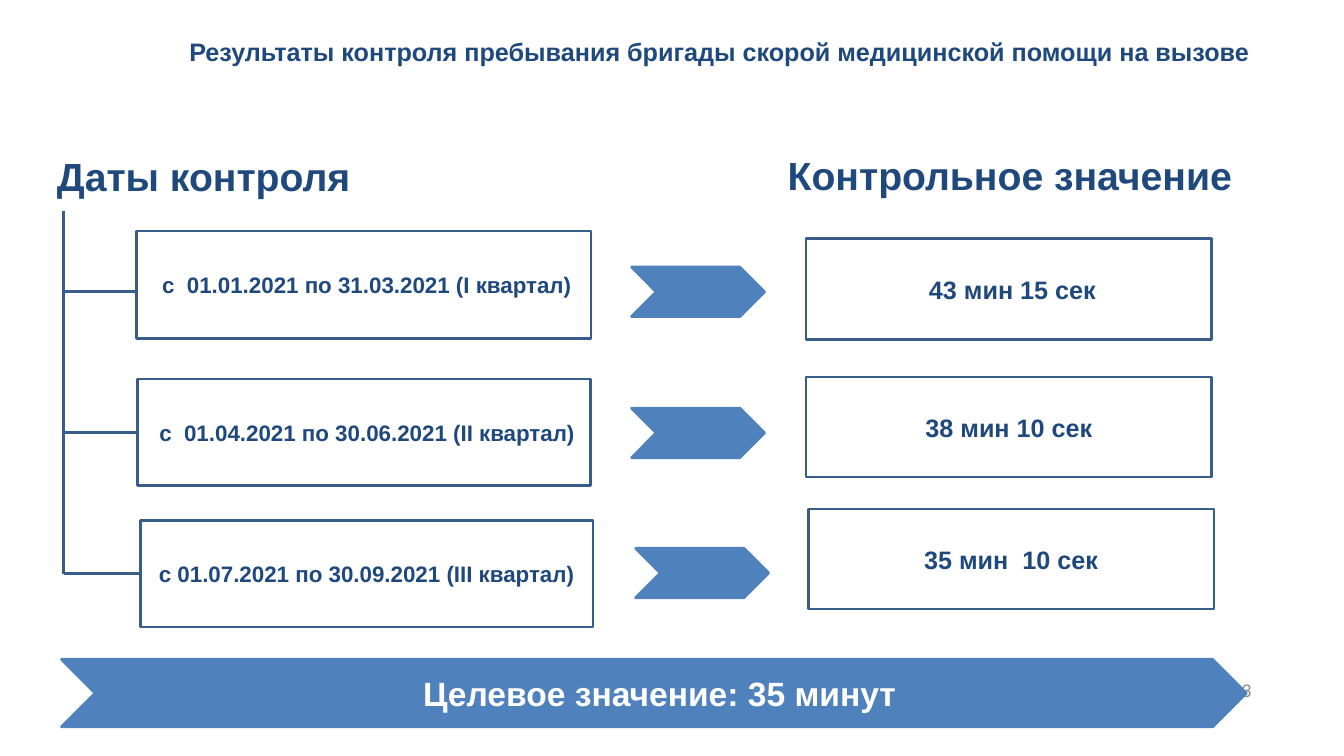
from typing import NamedTuple

from lxml.etree import SubElement
from pptx import Presentation
from pptx.dml.color import RGBColor
from pptx.enum.shapes import MSO_CONNECTOR, MSO_SHAPE
from pptx.enum.text import MSO_ANCHOR, PP_ALIGN
from pptx.oxml.ns import qn
from pptx.shapes.autoshape import Shape
from pptx.util import Pt

NAVY, BLUE, OUTLINE, WHITE, GRAY = "1F497D", "4F81BD", "385D8A", "FFFFFF", "8C8C8C"
SPINE_X, SPINE_TOP = 45.6, 150.5
BRANCH_TOP, BRANCH_STEP = 208.1, 100.8


class Box(NamedTuple):
    left: float
    top: float
    width: float
    height: float


class Quarter(NamedTuple):
    period: str
    period_box: Box
    arrow_box: Box
    value: str
    value_box: Box


QUARTERS = [
    Quarter(" с  01.01.2021 по 31.03.2021 (I квартал)", Box(97.4, 165, 325, 77),
            Box(451.4, 190.8, 95, 35.3), " 43 мин 15 сек", Box(576, 170.6, 290, 72)),
    Quarter(" с  01.04.2021 по 30.06.2021 (II квартал)", Box(98.4, 270.7, 323.5, 76.4),
            Box(451.4, 291.6, 95, 35.3), "38 мин 10 сек", Box(576, 269.3, 290, 71.4)),
    Quarter("с 01.07.2021 по 30.09.2021 (III квартал)", Box(100.3, 371.5, 323.5, 76.4),
            Box(454.3, 391.7, 95, 35.3), "35 мин  10 сек", Box(577.6, 363.6, 290, 71.4)),
]


def color(value: str) -> RGBColor:
    return RGBColor.from_string(value)


def write(s: Shape, text: str, size: float, font_color: str = NAVY, bold: bool = True,
          font: str = "Arial", align: PP_ALIGN = PP_ALIGN.CENTER) -> None:
    tf = s.text_frame
    tf.text = text
    tf.word_wrap = True
    tf.vertical_anchor = MSO_ANCHOR.MIDDLE
    p = tf.paragraphs[0]
    p.alignment = align
    r = p.runs[0]
    r.font.name, r.font.size, r.font.bold = font, Pt(size), bold
    r.font.color.rgb = color(font_color)


def add_text(box: Box, text: str, size: float, **style) -> None:
    write(slide.shapes.add_textbox(*map(Pt, box)), text, size, **style)


def add_figure(preset: MSO_SHAPE, box: Box, fill: str, line: str) -> Shape:
    s = slide.shapes.add_shape(preset, *map(Pt, box))
    s.shadow.inherit = False
    s.fill.solid()
    s.fill.fore_color.rgb = color(fill)
    s.line.color.rgb = color(line)
    s.line.width = Pt(2)
    return s


def add_line(x1: float, y1: float, x2: float, y2: float):
    c = slide.shapes.add_connector(MSO_CONNECTOR.STRAIGHT, *map(Pt, (x1, y1, x2, y2)))
    c.line.color.rgb = color(OUTLINE)
    c.line.width = Pt(2.25)
    SubElement(c._element.spPr, qn("a:effectLst"))
    return c


def add_quarter(quarter: Quarter, branch_y: float) -> None:
    period = add_figure(MSO_SHAPE.RECTANGLE, quarter.period_box, WHITE, OUTLINE)
    write(period, quarter.period, 16)
    add_figure(MSO_SHAPE.CHEVRON, quarter.arrow_box, BLUE, BLUE)
    value = add_figure(MSO_SHAPE.RECTANGLE, quarter.value_box, WHITE, OUTLINE)
    write(value, quarter.value, 18)

    box = quarter.period_box
    branch = add_line(SPINE_X, branch_y, box.left, branch_y)
    if abs(box.top + box.height / 2 - branch_y) < 1:
        branch.end_connect(period, 1)


prs = Presentation()
prs.slide_width, prs.slide_height = Pt(960.5), Pt(540)
slide = prs.slides.add_slide(prs.slide_layouts[6])

add_text(Box(677.5, 478, 224, 29), "3", 14, font_color=GRAY, bold=False,
         font="Calibri", align=PP_ALIGN.RIGHT)
add_text(Box(99.4, 13, 829.4, 46.8),
         "Результаты контроля пребывания бригады скорой медицинской помощи на вызове", 18)
add_text(Box(18, 103.4, 255, 44.6), "Даты контроля", 28)
add_text(Box(552.2, 102.4, 339, 44.6), "Контрольное значение", 28)

target = add_figure(MSO_SHAPE.CHEVRON, Box(44, 471, 846.7, 48.2), BLUE, BLUE)
write(target, "Целевое значение: 35 минут", 24, WHITE)
target.text_frame.margin_left, target.text_frame.margin_right = Pt(12), Pt(4)

for i, quarter in enumerate(QUARTERS):
    add_quarter(quarter, BRANCH_TOP + i * BRANCH_STEP)
add_line(SPINE_X, SPINE_TOP, SPINE_X, BRANCH_TOP + 2 * BRANCH_STEP)

prs.save("out.pptx")
